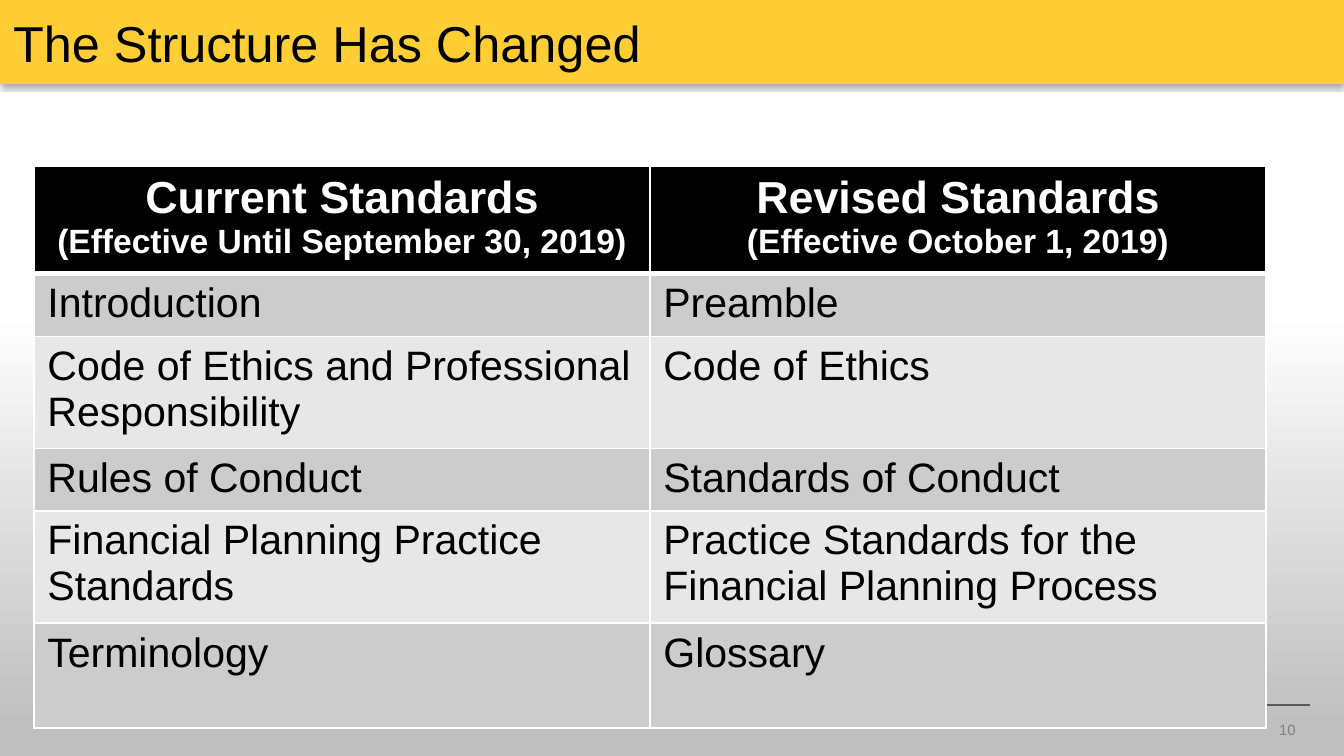
"""Build the slide that compares the current and revised standards."""
from dataclasses import dataclass

from lxml import etree
from pptx import Presentation
from pptx.dml.color import RGBColor
from pptx.enum.shapes import MSO_CONNECTOR, MSO_SHAPE
from pptx.enum.text import MSO_ANCHOR, PP_ALIGN
from pptx.oxml.ns import qn
from pptx.shapes.autoshape import Shape
from pptx.slide import Slide
from pptx.table import _Cell
from pptx.text.text import TextFrame
from pptx.util import Emu, Pt

RECTANGLE = MSO_SHAPE.RECTANGLE
STRAIGHT = MSO_CONNECTOR.STRAIGHT
TOP, MIDDLE = MSO_ANCHOR.TOP, MSO_ANCHOR.MIDDLE
LEFT, CENTER = PP_ALIGN.LEFT, PP_ALIGN.CENTER
PX_PER_INCH = 134.4


@dataclass(frozen=True)
class Theme:
    font: str = "Arial"
    banner: str = "FFCE34"
    black: str = "000000"
    white: str = "FFFFFF"
    fade: str = "BFBFBF"
    rule: str = "595959"
    page: str = "808080"
    bands: tuple[str, str] = ("CCCCCC", "E7E7E7")
    title_size: int = 27
    heading_size: int = 24
    dates_size: int = 18
    body_size: int = 22
    page_size: int = 8


@dataclass(frozen=True)
class Box:
    left: int
    top: int
    width: int
    height: int

    def emu(self) -> tuple[Emu, Emu, Emu, Emu]:
        """Return the four lengths in EMU."""
        return px(self.left), px(self.top), px(self.width), px(self.height)


@dataclass(frozen=True)
class Label:
    text: str
    box: Box
    size: int
    color: str
    anchor: MSO_ANCHOR


@dataclass(frozen=True)
class Row:
    current: str
    revised: str
    height: int


THEME = Theme()
BANNER = Box(0, 0, 1344, 84)
BODY = Box(0, 92, 1344, 664)
TABLE = Box(34, 166, 1232, 534)
LABELS = (
    Label("10", Box(1266, 714, 78, 40), THEME.page_size, THEME.page, TOP),
    Label("The Structure Has Changed", Box(0, 0, 964, 84), THEME.title_size, THEME.black, MIDDLE),
)
ROWS = (
    Row("Current Standards\n(Effective Until September 30, 2019)",
        "Revised Standards\n(Effective October 1, 2019)", 101),
    Row("Introduction", "Preamble", 59),
    Row("Code of Ethics and Professional Responsibility", "Code of Ethics", 105),
    Row("Rules of Conduct", "Standards of Conduct", 59),
    Row("Financial Planning Practice Standards",
        "Practice Standards for the Financial Planning Process", 105),
    Row("Terminology", "Glossary", 105),
)


def px(length: int) -> Emu:
    """Convert pixels to EMU."""
    return Emu(round(length * 914400 / PX_PER_INCH))


def add_color(parent: etree._Element, color: str) -> etree._Element:
    """Append an RGB colour element."""
    return etree.SubElement(parent, qn("a:srgbClr"), val=color)


def add_panel(slide: Slide, box: Box) -> Shape:
    """Add a borderless rectangle with a soft shadow below it."""
    shape = slide.shapes.add_shape(RECTANGLE, *box.emu())
    shape.line.fill.background()
    shape.shadow.inherit = False
    effects = shape._element.spPr.find(qn("a:effectLst"))
    shadow = etree.SubElement(effects, qn("a:outerShdw"), blurRad=str(Pt(3.1)),
                              dist=str(Pt(1.8)), dir="5400000", rotWithShape="0")
    etree.SubElement(add_color(shadow, THEME.black), qn("a:alpha"), val="35000")
    return shape


def add_background(slide: Slide) -> None:
    """Draw the banner, the fading body and the footer rule."""
    banner = add_panel(slide, BANNER)
    banner.fill.solid()
    banner.fill.fore_color.rgb = RGBColor.from_string(THEME.banner)
    body = add_panel(slide, BODY)
    body.fill.gradient()
    body.fill.gradient_angle = 90
    stops = ((0.04, THEME.fade), (0.67, THEME.white))
    for stop, (position, color) in zip(body.fill.gradient_stops, stops):
        stop.position = position
        stop.color.rgb = RGBColor.from_string(color)
    rule = slide.shapes.add_connector(STRAIGHT, px(34), px(705), px(1310), px(705))
    rule.line.color.rgb = RGBColor.from_string(THEME.rule)
    rule.line.width = Pt(0.75)
    etree.SubElement(rule._element.spPr, qn("a:effectLst"))


def format_text(frame: TextFrame, sizes: tuple[int, ...], color: str,
                alignment: PP_ALIGN = LEFT, bold: bool = False) -> None:
    """Format each paragraph with its own size."""
    for paragraph, size in zip(frame.paragraphs, sizes):
        paragraph.alignment = alignment
        for run in paragraph.runs:
            run.font.name = THEME.font
            run.font.size = Pt(size)
            run.font.bold = bold
            run.font.color.rgb = RGBColor.from_string(color)


def add_label(slide: Slide, label: Label) -> None:
    """Add one text box."""
    frame = slide.shapes.add_textbox(*label.box.emu()).text_frame
    frame.word_wrap = True
    frame.vertical_anchor = label.anchor
    frame.text = label.text
    format_text(frame, (label.size,), label.color)


def style_cell(cell: _Cell, fill: str, top: int, bottom: int) -> None:
    """Give a cell white borders and a solid fill."""
    properties = cell._tc.get_or_add_tcPr()
    for side, width in (("L", 1), ("R", 1), ("T", top), ("B", bottom)):
        line = etree.SubElement(properties, qn(f"a:ln{side}"), w=str(Pt(width)))
        add_color(etree.SubElement(line, qn("a:solidFill")), THEME.white)
    cell.fill.solid()
    cell.fill.fore_color.rgb = RGBColor.from_string(fill)


def add_standards_table(slide: Slide) -> None:
    """Add the table of current and revised standards."""
    table = slide.shapes.add_table(len(ROWS), 2, *TABLE.emu()).table
    for column in table.columns:
        column.width = px(TABLE.width // 2)
    for index, row in enumerate(ROWS):
        table.rows[index].height = px(row.height)
        for cell, text in zip(table.rows[index].cells, (row.current, row.revised)):
            cell.text_frame.text = text
            if index == 0:
                style_cell(cell, THEME.black, 1, 3)
                format_text(cell.text_frame, (THEME.heading_size, THEME.dates_size),
                            THEME.white, CENTER, True)
            else:
                style_cell(cell, THEME.bands[(index - 1) % 2], 3 if index == 1 else 1, 1)
                format_text(cell.text_frame, (THEME.body_size,), THEME.black)


def main() -> None:
    """Create and save the presentation."""
    presentation = Presentation()
    presentation.slide_width, presentation.slide_height = px(1344), px(756)
    slide = presentation.slides.add_slide(presentation.slide_layouts[6])
    add_background(slide)
    for label in LABELS:
        add_label(slide, label)
    add_standards_table(slide)
    presentation.save("out.pptx")


if __name__ == "__main__":
    main()
